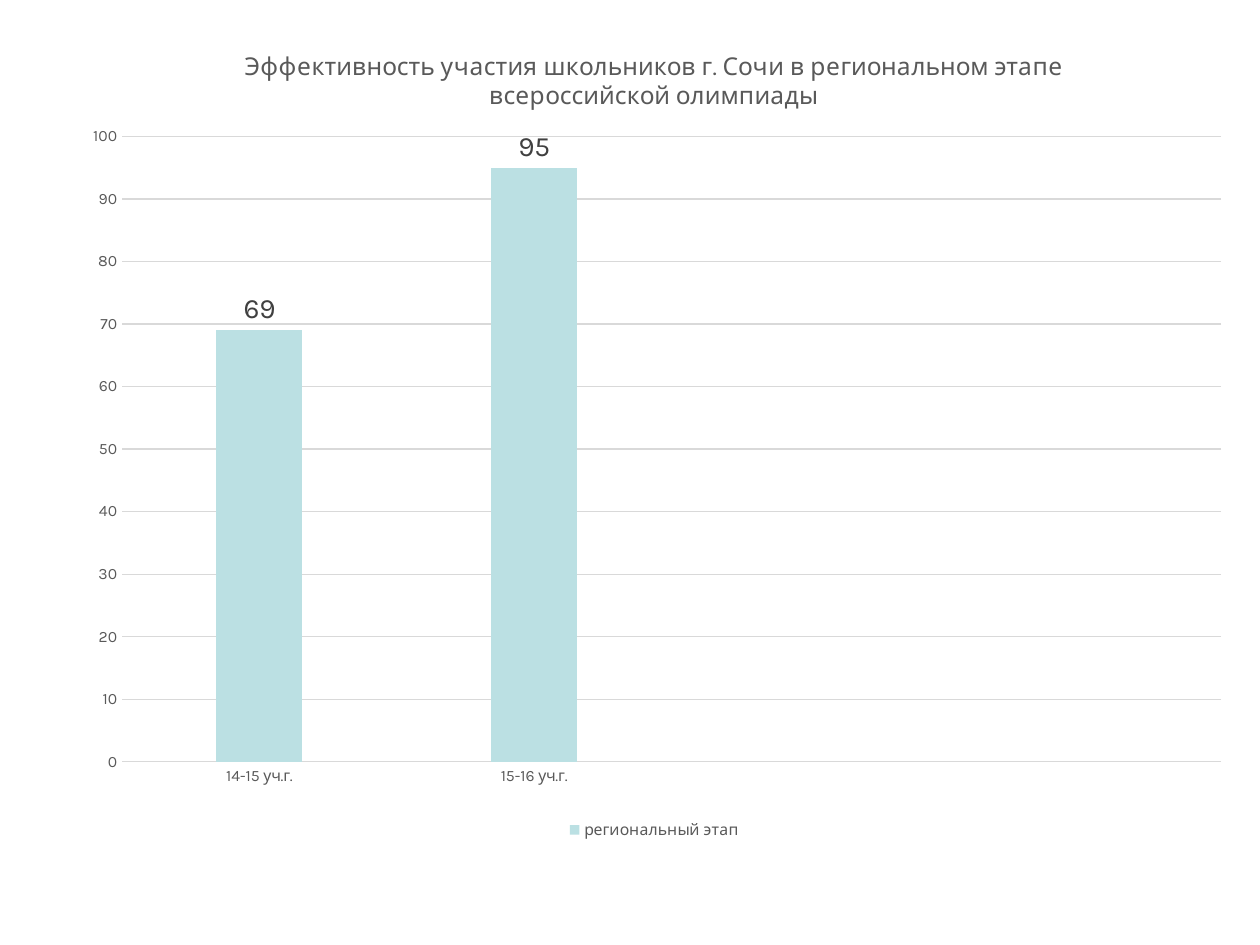
from lxml.etree import SubElement
from pptx import Presentation
from pptx.chart.data import CategoryChartData
from pptx.dml.color import RGBColor
from pptx.enum.chart import XL_CHART_TYPE, XL_LABEL_POSITION, XL_LEGEND_POSITION, XL_TICK_MARK
from pptx.oxml.ns import qn
from pptx.util import Inches, Pt

COLORS = {"bar": "BBE0E3", "grid": "D9D9D9", "text": "595959", "label": "404040"}
FONT = "Karla"
TITLE = "Эффективность участия школьников г. Сочи в региональном этапе всероссийской олимпиады"


def style_font(font, size, color):
    font.name = FONT
    font.size = Pt(size)
    font.bold = False
    font.color.rgb = RGBColor.from_string(COLORS[color])


def style_line(line):
    line.color.rgb = RGBColor.from_string(COLORS["grid"])
    line.width = Pt(0.75)


def place_part(part, index, target=None, **fractions):
    for old_layout in part.findall(qn("c:layout")):
        part.remove(old_layout)
    layout = SubElement(part, qn("c:layout"))
    part.insert(index, layout)
    manual = SubElement(layout, qn("c:manualLayout"))
    if target:
        SubElement(manual, qn("c:layoutTarget")).set("val", target)
    for mode in ("xMode", "yMode"):
        SubElement(manual, qn(f"c:{mode}")).set("val", "edge")
    for name, value in fractions.items():
        SubElement(manual, qn(f"c:{name}")).set("val", str(value))


def add_title(chart):
    chart.has_title = True
    frame = chart.chart_title.text_frame
    frame.text = TITLE
    style_font(frame.paragraphs[0].runs[0].font, 14, "text")
    place_part(chart._chartSpace.chart.find(qn("c:title")), 1, x=0.15, y=0.03)


def style_axes(chart):
    for axis in (chart.category_axis, chart.value_axis):
        axis.major_tick_mark = XL_TICK_MARK.NONE
        axis.minor_tick_mark = XL_TICK_MARK.NONE
        style_font(axis.tick_labels.font, 9, "text")
    style_line(chart.category_axis.format.line)
    values = chart.value_axis
    values.minimum_scale, values.maximum_scale, values.major_unit = 0, 100, 10
    values.format.line.fill.background()
    style_line(values.major_gridlines.format.line)


def style_columns(plot):
    plot.gap_width = 219
    plot.overlap = -27
    plot.vary_by_categories = False
    series = plot.series[0]
    series.format.fill.solid()
    series.format.fill.fore_color.rgb = RGBColor.from_string(COLORS["bar"])
    labels = series.data_labels
    labels.show_value = True
    labels.position = XL_LABEL_POSITION.OUTSIDE_END
    style_font(labels.font, 16, "label")


def add_results_chart(page, left, top, width, height):
    data = CategoryChartData()
    data.categories = ["14-15 уч.г.", "15-16 уч.г.", "", ""]
    data.add_series("региональный этап", [69, 95, None, None])
    chart = page.shapes.add_chart(
        XL_CHART_TYPE.COLUMN_CLUSTERED, left, top, width, height, data
    ).chart
    chart.font.name = FONT
    chart.font.size = Pt(10)
    add_title(chart)
    style_axes(chart)
    style_columns(chart.plots[0])
    chart.has_legend = True
    chart.legend.position = XL_LEGEND_POSITION.BOTTOM
    chart.legend.include_in_layout = False
    style_font(chart.legend.font, 9, "text")
    plot_area = chart._chartSpace.chart.plotArea
    place_part(plot_area, 0, "inner", x=0.05, y=0.14, w=0.93, h=0.76)


def main():
    deck = Presentation()
    deck.slide_width, deck.slide_height = Inches(10), Inches(7.5)
    page = deck.slides.add_slide(deck.slide_layouts[6])
    add_results_chart(page, Inches(0.5), Inches(0.17), Inches(9.38), Inches(6.53))
    deck.save("out.pptx")


if __name__ == "__main__":
    main()
